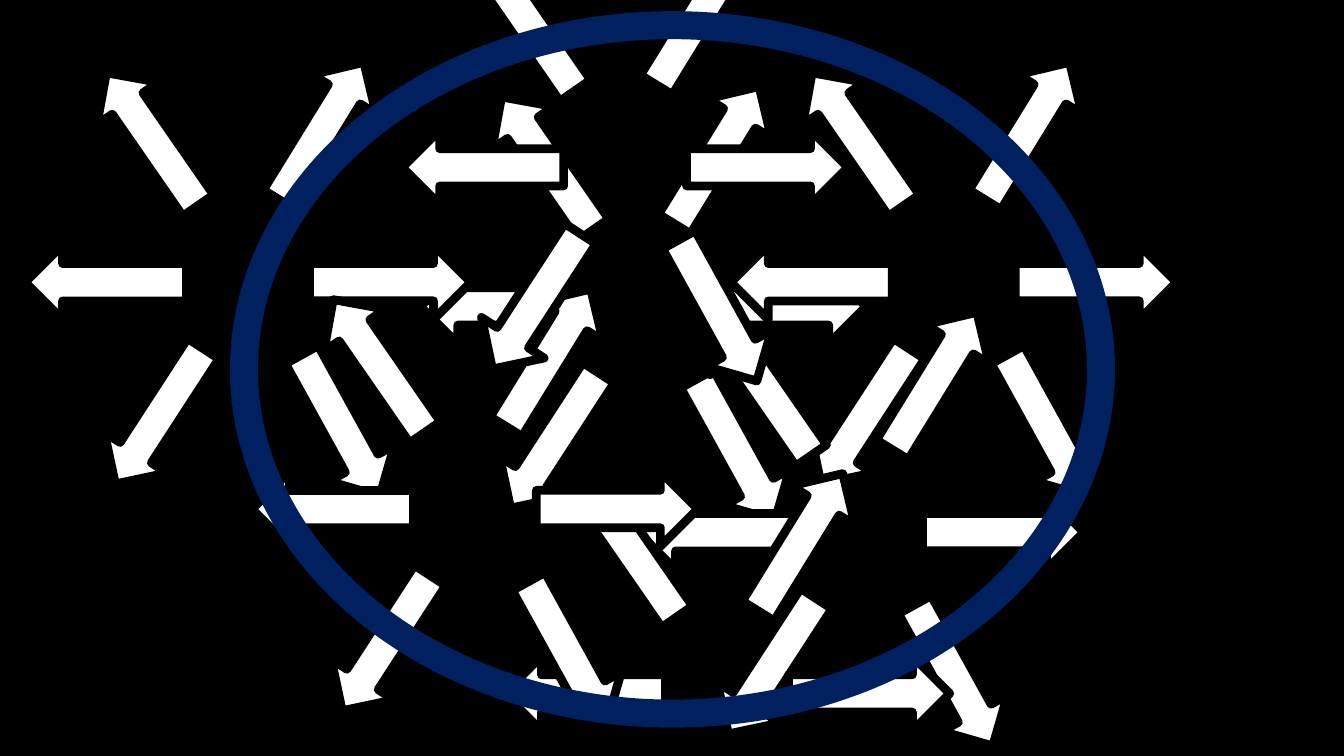
"""Build a slide of outward-pointing arrow bursts behind a large ring."""
import pptx
import pptx.util
import pptx.dml.color
import pptx.enum.shapes

Inches = pptx.util.Inches
RGB = pptx.dml.color.RGBColor.from_string
SHAPE = pptx.enum.shapes.MSO_SHAPE
COLORS = {"black": "000000", "white": "FFFFFF", "navy": "002060"}
SLIDE_W, SLIDE_H = 13.33, 7.5
ARROW_W, ARROW_H = 1.6, 0.74


def set_line(sp, color, width):
    sp.shadow.inherit = False
    sp.line.color.rgb = RGB(COLORS[color])
    sp.line.width = pptx.util.Pt(width)


prs = pptx.Presentation()
prs.slide_width = Inches(SLIDE_W)
prs.slide_height = Inches(SLIDE_H)
s = prs.slides.add_slide(prs.slide_layouts[6])
s.background.fill.solid()
s.background.fill.fore_color.rgb = RGB(COLORS["black"])

burst_arrows = [
    (2.33, 1.42, 61.1),
    (0.53, 1.33, 123),
    (2.14, -1.5, 301.6),
    (0.46, -1.42, 235.3),
    (0, 0, 180),
    (2.82, 0, 0),
]
burst_origins = [
    (4.17, 2.67),
    (7.25, 2.43),
    (0.25, 2.43),
    (6.33, 4.91),
    (5, 6.51),
    (2.5, 4.68),
    (3.99, 1.29),
]

for left, top in burst_origins:
    burst = s.shapes.add_group_shape()
    for dx, dy, angle in burst_arrows:
        if top + dy > SLIDE_H:
            continue
        sp = burst.shapes.add_shape(
            SHAPE.RIGHT_ARROW, Inches(left + dx), Inches(top + dy),
            Inches(ARROW_W), Inches(ARROW_H))
        sp.rotation = angle
        sp.fill.solid()
        sp.fill.fore_color.rgb = RGB(COLORS["white"])
        set_line(sp, "black", 6.25)

ring = s.shapes.add_shape(
    SHAPE.OVAL, Inches(2.42), Inches(0.25), Inches(8.5), Inches(6.83))
ring.fill.background()
set_line(ring, "navy", 20)

prs.save("out.pptx")
